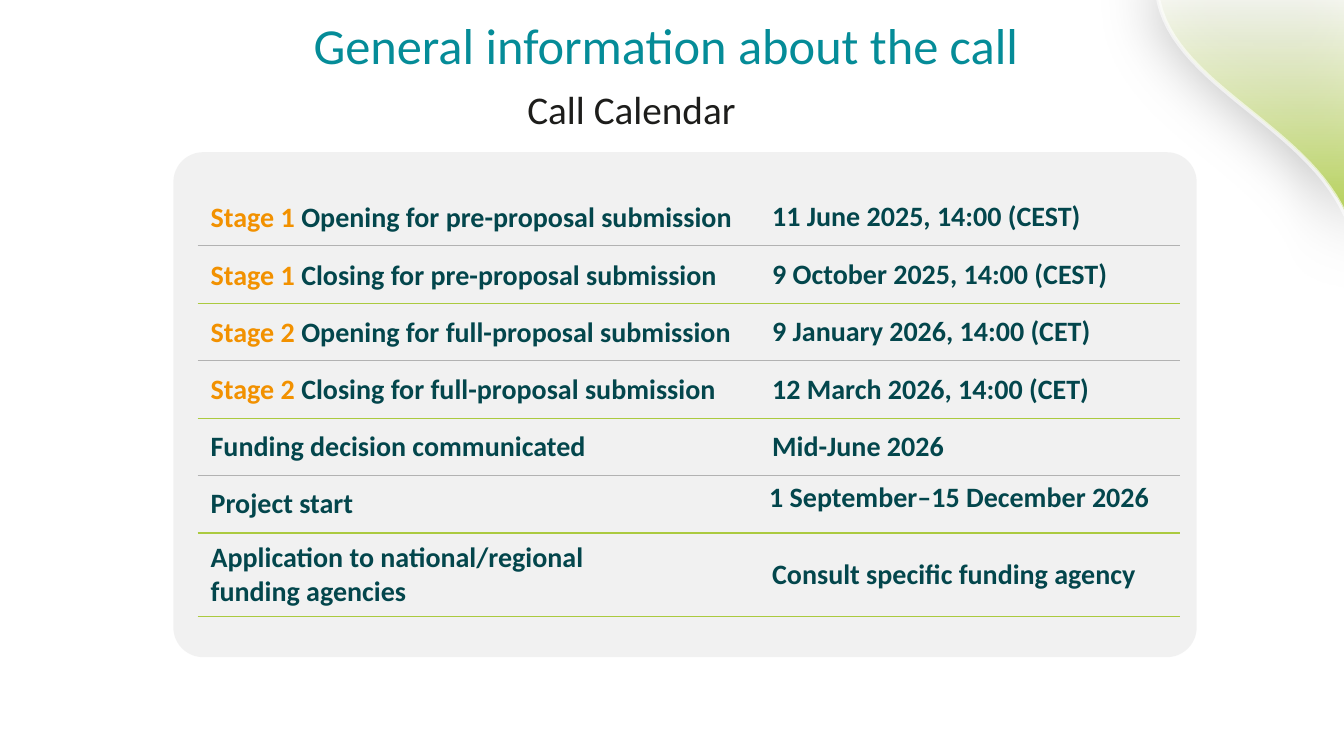
from dataclasses import dataclass

from lxml import etree
from pptx import Presentation
from pptx import util as u
from pptx.dml import color
from pptx.enum import shapes, text
from pptx.oxml import ns


@dataclass(frozen=True)
class Theme:
    font: str = "Calibri"
    heading: str = "058C98"
    subheading: str = "1D1D1B"
    ink: str = "03464C"
    stage: str = "F29100"
    green: str = "ABCA3F"
    grey: str = "B2B2B2"
    panel: str = "F0F0F0"
    white: str = "FFFFFF"
    title_size: int = 36
    body_size: int = 28
    table_size: int = 20


def apply(target, formats):
    for name, value in formats.items():
        setattr(target, name, value)


def rgb(value):
    return color.RGBColor.from_string(value)


def add_xml(parent, tag, **attributes):
    return etree.SubElement(parent, ns.qn(tag), attributes)


def set_alpha(fill_element, percent):
    add_xml(next(fill_element.iter(ns.qn("a:srgbClr"))), "a:alpha", val=str(percent * 1000))


class CalendarPage:
    """Lengths are percent of the slide's width (x) and height (y)."""

    def __init__(self, deck, theme):
        self.deck, self.theme = deck, theme
        self.page = deck.slides.add_slide(deck.slide_layouts[1])

    def x(self, share):
        return u.Emu(round(self.deck.slide_width * share / 100))

    def y(self, share):
        return u.Emu(round(self.deck.slide_height * share / 100))

    def area(self, left, top, width, height):
        return self.x(left), self.y(top), self.x(width), self.y(height)

    def add_spans(self, para, spans, size, bold=False):
        for words, ink in spans:
            span = para.add_run()
            span.text = words
            apply(span.font, {"name": self.theme.font, "size": u.Pt(size), "bold": bold})
            span.font.color.rgb = rgb(ink)

    def placeholder(self, index, area, words, ink, size, anchor, paragraph, indent=0):
        box = self.page.placeholders[index]
        apply(box, dict(zip(("left", "top", "width", "height"), self.area(*area))))
        frame = box.text_frame
        apply(frame, {"margin_left": 0, "margin_right": 0, "margin_top": 0, "margin_bottom": 0,
                      "word_wrap": True, "auto_size": text.MSO_AUTO_SIZE.NONE,
                      "vertical_anchor": anchor})
        para = frame.paragraphs[0]
        properties = para._p.get_or_add_pPr()
        properties.set("marL", str(u.Inches(indent)))
        properties.set("indent", "0")
        add_xml(properties, "a:buNone")
        apply(para, {"alignment": text.PP_ALIGN.LEFT, "space_before": u.Pt(0), **paragraph})
        self.add_spans(para, [(words, ink)], size)

    def wave(self, start, pull_start, pull_end, end, steps=32):
        def point(t):
            weights = ((1 - t) ** 3, 3 * t * (1 - t) ** 2, 3 * t * t * (1 - t), t ** 3)
            corners = (start, pull_start, pull_end, end)
            across, down = (sum(w * c[i] for w, c in zip(weights, corners)) for i in (0, 1))
            return self.x(across), self.y(down)

        outline = self.page.shapes.build_freeform(self.x(end[0]), self.y(start[1]))
        outline.add_line_segments([point(i / steps) for i in range(steps + 1)], close=True)
        shape = outline.convert_to_shape()
        shape.fill.gradient()
        shape.fill.gradient_angle = 270
        for stop, ink in zip(shape.fill.gradient_stops, (self.theme.white, self.theme.green)):
            stop.color.rgb = rgb(ink)
        shape.line.color.rgb = rgb(self.theme.white)
        shape.line.width = u.Pt(3)
        properties = shape._element.spPr
        set_alpha(properties.find(ns.qn("a:gradFill")), 80)
        set_alpha(properties.find(ns.qn("a:ln")), 60)
        shape.shadow.inherit = False
        shadow = add_xml(properties.find(ns.qn("a:effectLst")), "a:outerShdw",
                         blurRad=str(u.Pt(45)), dist=str(u.Pt(1.5)), dir="10800000")
        add_xml(shadow, "a:srgbClr", val="000000")
        set_alpha(shadow, 30)

    def panel(self, area, rounding):
        shape = self.page.shapes.add_shape(shapes.MSO_SHAPE.ROUNDED_RECTANGLE, *self.area(*area))
        shape.adjustments[0] = rounding
        shape.shadow.inherit = False
        shape.fill.solid()
        shape.fill.fore_color.rgb = rgb(self.theme.panel)
        set_alpha(shape._element.spPr.find(ns.qn("a:solidFill")), 88)
        shape.line.fill.background()

    def borders(self, cell, above, below):
        properties = cell._tc.get_or_add_tcPr()
        sides = {"a:lnL": None, "a:lnR": None, "a:lnT": above, "a:lnB": below}
        for position, (tag, ink) in enumerate(sides.items()):
            line = add_xml(properties, tag, w=str(u.Pt(1)))
            if ink:
                add_xml(add_xml(line, "a:solidFill"), "a:srgbClr", val=ink)
            else:
                add_xml(line, "a:noFill")
            properties.insert(position, line)

    def calendar(self, left, top, columns, heights, rows):
        area = self.area(left, top, sum(columns), sum(heights))
        table = self.page.shapes.add_table(len(rows), len(columns), *area).table
        apply(table, {"first_row": False, "horz_banding": False})
        for column, width in zip(table.columns, columns):
            column.width = self.x(width)
        above = None
        for i, (stage, lines, date, raised) in enumerate(rows):
            table.rows[i].height = self.y(heights[i])
            below = self.theme.green if i % 2 or i == len(rows) - 1 else self.theme.grey
            for j, content in enumerate((lines, [date])):
                cell = table.cell(i, j)
                cell.fill.background()
                self.borders(cell, above, below)
                side, edge = (0.1, 0.05) if raised and j else (0.13, 0.07)
                apply(cell, {"margin_left": u.Inches(side), "margin_right": u.Inches(side),
                             "margin_top": u.Inches(edge), "margin_bottom": u.Inches(edge),
                             "vertical_anchor": text.MSO_ANCHOR.TOP if raised and j
                             else text.MSO_ANCHOR.MIDDLE})
                for k, words in enumerate(content):
                    frame = cell.text_frame
                    para = frame.add_paragraph() if k else frame.paragraphs[0]
                    spans = [(words, self.theme.ink)]
                    if stage and not j:
                        spans.insert(0, (stage + " ", self.theme.stage))
                        apply(para, {"line_spacing": 1.05, "space_after": u.Pt(6)})
                    self.add_spans(para, spans, self.theme.table_size, bold=True)
            above = below


# Stage, label lines, date, whether the date sits at the top of its cell
CALENDAR = [
    ("Stage 1", ["Opening for pre-proposal submission"], "11 June 2025, 14:00 (CEST)", False),
    ("Stage 1", ["Closing for pre-proposal submission"], "9 October 2025, 14:00 (CEST)", False),
    ("Stage 2", ["Opening for full-proposal submission"], "9 January 2026, 14:00 (CET)", False),
    ("Stage 2", ["Closing for full-proposal submission"], "12 March 2026, 14:00 (CET)", False),
    ("", ["Funding decision communicated"], "Mid-June 2026", False),
    ("", ["Project start"], "1 September–15 December 2026", True),
    ("", ["Application to national/regional", "funding agencies"],
     "Consult specific funding agency", False),
]


def main():
    deck = Presentation()
    deck.slide_width, deck.slide_height = u.Inches(13.33), u.Inches(7.5)
    theme = Theme()
    page = CalendarPage(deck, theme)

    # Corner decoration and backdrop
    page.wave((86.05, -2.27), (86.2, 11.87), (99.32, 16.93), (100.83, 32.67))
    page.panel((12.9, 20.13, 76.14, 66.8), 0.059)

    # Headings
    page.placeholder(0, (23.33, 2.67, 62.57, 7.33), "General information about the call",
                     theme.heading, theme.title_size, text.MSO_ANCHOR.BOTTOM,
                     {"line_spacing": 0.9})
    page.placeholder(1, (37.81, 10.93, 40, 7), "Call Calendar",
                     theme.subheading, theme.body_size, text.MSO_ANCHOR.TOP,
                     {"line_spacing": 1.05, "space_after": u.Pt(6)}, indent=0.19)

    # Calendar table
    page.calendar(14.7, 24.93, (41.78, 31.36), [7.6] * 6 + [11.07], CALENDAR)

    deck.save("out.pptx")


if __name__ == "__main__":
    main()
